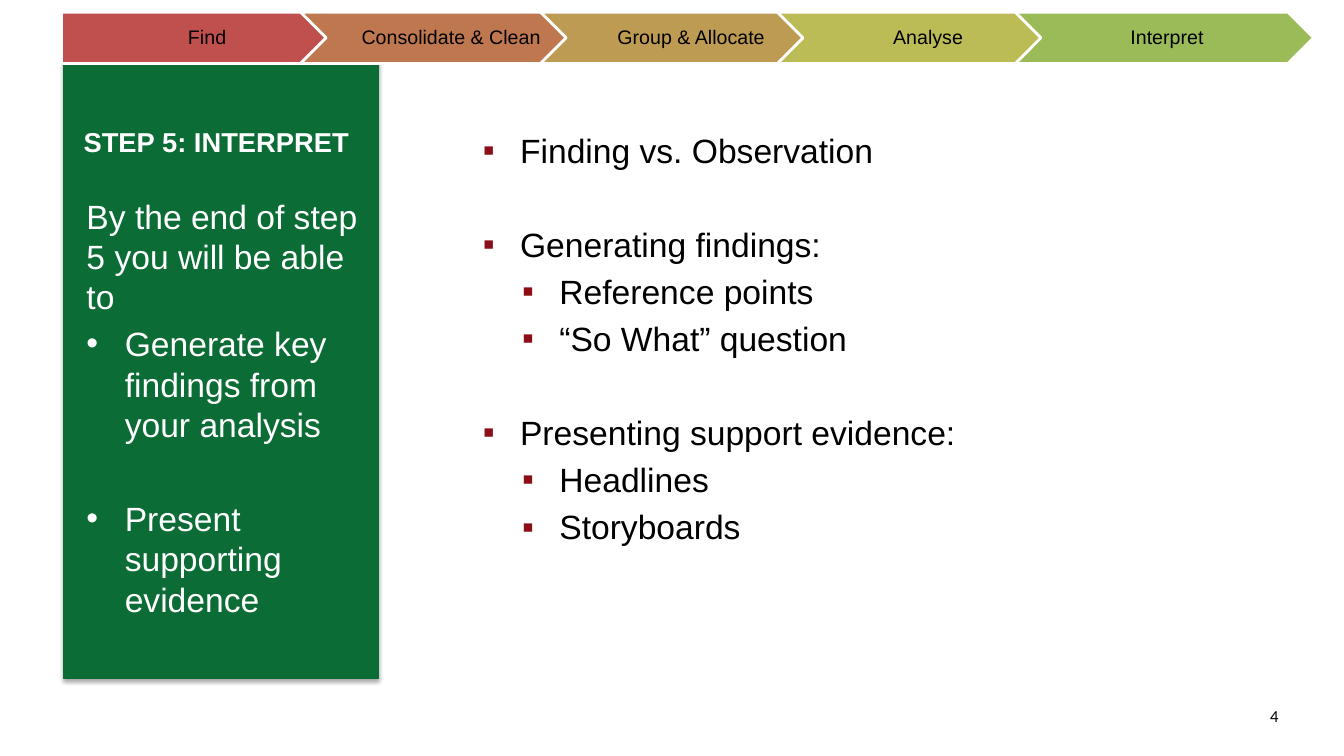
from dataclasses import dataclass

from lxml import etree
from pptx import Presentation
from pptx.dml.color import RGBColor
from pptx.enum.shapes import MSO_SHAPE
from pptx.enum.text import MSO_ANCHOR, PP_ALIGN
from pptx.oxml.ns import qn
from pptx.util import Pt

SCALE = 9144
RECTANGLE = MSO_SHAPE.RECTANGLE
PENTAGON = MSO_SHAPE.PENTAGON
CHEVRON = MSO_SHAPE.CHEVRON
TOP, MIDDLE, BOTTOM = MSO_ANCHOR.TOP, MSO_ANCHOR.MIDDLE, MSO_ANCHOR.BOTTOM
LEFT, CENTER, RIGHT = PP_ALIGN.LEFT, PP_ALIGN.CENTER, PP_ALIGN.RIGHT

COLORS = {
    "white": "FFFFFF", "black": "000000", "bullet": "8B0E18",
    "panel": "0B6C36", "panel_edge": "086C35",
    "find": "C0504D", "consolidate": "BF7750", "group": "BD9B53",
    "analyse": "BCBC56", "interpret": "9BBB59",
}
FORMATS = {
    "body": {"name": "Arial", "size": Pt(24)},
    "title": {"name": "Arial", "size": Pt(19.5), "bold": True},
    "step": {"name": "Arial", "size": Pt(14)},
    "number": {"name": "Calibri", "size": Pt(12)},
}
BODY_LINE = Pt(28.8)
CLOSE_GAP = Pt(4.8)
WIDE_GAP = Pt(38.4)


@dataclass(frozen=True)
class Box:
    left: int
    top: int
    width: int
    height: int

    def emu(self) -> tuple[int, ...]:
        return tuple(value * SCALE for value in (self.left, self.top, self.width, self.height))


@dataclass(frozen=True)
class Line:
    text: str
    format: str = "body"
    color: str = "black"
    align: PP_ALIGN = LEFT
    spacing: float | int | None = None
    before: int = 0
    level: int = 0
    indent: int = 0
    hanging: int = 0
    bullet: str = ""
    bullet_color: str = "bullet"


@dataclass(frozen=True)
class Step:
    label: str
    color: str
    outline: MSO_SHAPE
    left: int
    label_box: Box
    inset: int = 6


def point(text: str, level: int = 1, before: int = CLOSE_GAP) -> Line:
    return Line(text, spacing=BODY_LINE, before=before, level=level,
                indent=40 + 39 * level, hanging=37, bullet="▪")


def goal(text: str, before: int = CLOSE_GAP) -> Line:
    return Line(text, color="white", spacing=BODY_LINE, before=before,
                indent=38, hanging=38, bullet="•", bullet_color="white")


STEPS = [
    Step("Find", "find", PENTAGON, 61, Box(61, 12, 283, 51), 8),
    Step("Consolidate & Clean", "consolidate", CHEVRON, 298, Box(323, 12, 245, 51)),
    Step("Group & Allocate", "group", CHEVRON, 536, Box(561, 12, 245, 51)),
    Step("Analyse", "analyse", CHEVRON, 771, Box(796, 12, 245, 51)),
    Step("Interpret", "interpret", CHEVRON, 1007, Box(1033, 12, 245, 51)),
]
TOPICS = [
    point("Finding vs. Observation", before=0),
    point("Generating findings:", before=WIDE_GAP),
    point("Reference points", 2),
    point("“So What” question", 2),
    point("Presenting support evidence:", before=WIDE_GAP),
    point("Headlines", 2),
    point("Storyboards", 2),
]
GOALS = [
    Line("By the end of step 5 you will be able to", color="white", spacing=BODY_LINE),
    goal("Generate key findings from your analysis"),
    goal("Present supporting evidence", WIDE_GAP),
]


def color_of(name: str) -> RGBColor:
    return RGBColor.from_string(COLORS[name])


def add_bullet(properties, line: Line) -> None:
    properties.set("marL", str(line.indent * SCALE))
    properties.set("indent", str(-line.hanging * SCALE))
    color = etree.SubElement(properties, qn("a:buClr"))
    etree.SubElement(color, qn("a:srgbClr"), val=COLORS[line.bullet_color])
    etree.SubElement(properties, qn("a:buFont"), typeface="Arial")
    etree.SubElement(properties, qn("a:buChar"), char=line.bullet)


def add_text(slide, box: Box, lines: list[Line], anchor: MSO_ANCHOR = TOP,
             insets: tuple[int, int, int, int] = (10, 5, 10, 5)) -> None:
    frame = slide.shapes.add_textbox(*box.emu()).text_frame
    frame.word_wrap = True
    frame.vertical_anchor = anchor
    for side, inset in zip(("left", "top", "right", "bottom"), insets):
        setattr(frame, f"margin_{side}", inset * SCALE)
    for index, line in enumerate(lines):
        paragraph = frame.add_paragraph() if index else frame.paragraphs[0]
        if line.bullet:
            add_bullet(paragraph._p.get_or_add_pPr(), line)
        layout = {"level": line.level, "alignment": line.align,
                  "line_spacing": line.spacing, "space_before": line.before}
        for name, value in layout.items():
            setattr(paragraph, name, value)
        run = paragraph.add_run()
        run.text = line.text
        for name, value in FORMATS[line.format].items():
            setattr(run.font, name, value)
        run.font.color.rgb = color_of(line.color)


def add_outline(slide, outline: MSO_SHAPE, box: Box, fill: str, edge: str, weight: float):
    shape = slide.shapes.add_shape(outline, *box.emu())
    shape.shadow.inherit = False
    shape.fill.solid()
    shape.fill.fore_color.rgb = color_of(fill)
    shape.line.color.rgb = color_of(edge)
    shape.line.width = Pt(weight)
    return shape


def add_panel(slide) -> None:
    shape = add_outline(slide, RECTANGLE, Box(63, 34, 312, 639), "panel", "panel_edge", 0.75)
    effects = shape._element.spPr.find(qn("a:effectLst"))
    shadow = etree.SubElement(effects, qn("a:outerShdw"), blurRad=str(Pt(3.1)),
                              dist=str(Pt(1.8)), dir="5400000", rotWithShape="0")
    color = etree.SubElement(shadow, qn("a:srgbClr"), val=COLORS["black"])
    etree.SubElement(color, qn("a:alpha"), val="35000")


def add_step(slide, step: Step) -> None:
    add_outline(slide, step.outline, Box(step.left, 12, 296, 51), step.color, "white", 2)
    label = Line(step.label, "step", align=CENTER, spacing=0.9)
    add_text(slide, step.label_box, [label], MIDDLE, (step.inset, 4, 2, 4))


def main() -> None:
    presentation = Presentation()
    presentation.slide_width = 1333 * SCALE
    presentation.slide_height = 750 * SCALE
    slide = presentation.slides.add_slide(presentation.slide_layouts[6])
    add_panel(slide)
    add_text(slide, Box(1202, 695, 76, 39), [Line("4", "number", align=RIGHT)])
    add_text(slide, Box(427, 124, 787, 509), TOPICS)
    add_text(slide, Box(73, 27, 311, 135), [Line("STEP 5: INTERPRET", "title", "white")], BOTTOM)
    add_text(slide, Box(76, 189, 290, 516), GOALS)
    for step in STEPS:
        add_step(slide, step)
    presentation.save("out.pptx")


if __name__ == "__main__":
    main()
